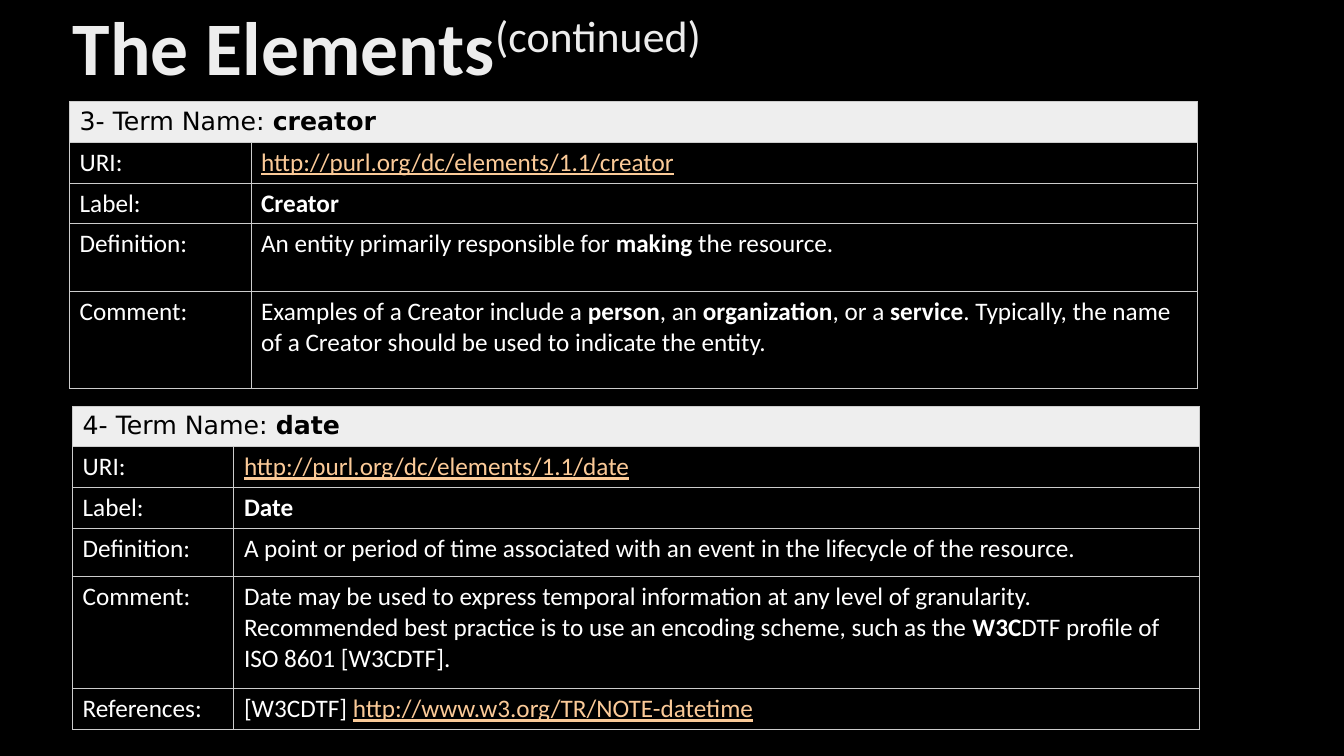
"""Build the slide describing the creator and date metadata elements."""
import dataclasses

import lxml.etree
import pptx
import pptx.dml.color
import pptx.enum.text
import pptx.oxml.ns
import pptx.util

Inches = pptx.util.Inches
Pt = pptx.util.Pt


@dataclasses.dataclass(frozen=True)
class Theme:
    background: str = "000000"
    title: str = "EDEDED"
    text: str = "FFFFFF"
    link: str = "FBCA98"
    header_fill: str = "EEEEEE"
    header_text: str = "000000"
    border: str = "CCCCCC"
    body_font: str = "Calibri"
    header_font: str = "DejaVu Sans"
    title_size: int = 54
    table_size: int = 18
    border_width: float = 0.75


class ElementSlide:
    def __init__(self, presentation, theme):
        self.theme = theme
        self.slide = presentation.slides.add_slide(presentation.slide_layouts[5])
        background = self.slide.background.fill
        background.solid()
        background.fore_color.rgb = self.rgb(theme.background)

    def rgb(self, color):
        return pptx.dml.color.RGBColor.from_string(color)

    def style(self, paragraph, font_name, size, color):
        paragraph.font.name = font_name
        paragraph.font.size = Pt(size)
        paragraph.font.color.rgb = self.rgb(color)

    def title(self, heading, suffix):
        title = self.slide.shapes.title
        title.left, title.top = Inches(0.62), Inches(0)
        title.width, title.height = Inches(11.5), Inches(1.01)
        frame = title.text_frame
        frame.auto_size = pptx.enum.text.MSO_AUTO_SIZE.NONE
        frame.vertical_anchor = pptx.enum.text.MSO_ANCHOR.MIDDLE
        paragraph = frame.paragraphs[0]
        paragraph.alignment = pptx.enum.text.PP_ALIGN.LEFT
        paragraph.line_spacing = 0.9
        self.style(paragraph, self.theme.body_font, self.theme.title_size, self.theme.title)
        for text, bold in ((heading, True), (suffix, False)):
            run = paragraph.add_run()
            run.text = text
            run.font.bold = bold
        run.font._element.set("baseline", "30000")

    def rich_text(self, paragraph, text):
        """Write text in which * encloses bold words and | encloses links."""
        for link_index, section in enumerate(text.split("|")):
            for bold_index, words in enumerate(section.split("*")):
                if not words:
                    continue
                run = paragraph.add_run()
                run.text = words
                run.font.bold = bold_index % 2 == 1
                if link_index % 2 == 1:
                    run.font.underline = True
                    run.font.color.rgb = self.rgb(self.theme.link)

    def borders(self, cell):
        properties = cell._tc.get_or_add_tcPr()
        qn = pptx.oxml.ns.qn
        for index, side in enumerate("LRTB"):
            line = lxml.etree.Element(qn(f"a:ln{side}"), w=str(Pt(self.theme.border_width)))
            fill = lxml.etree.SubElement(line, qn("a:solidFill"))
            lxml.etree.SubElement(fill, qn("a:srgbClr"), val=self.theme.border)
            properties.insert(index, line)

    def cell(self, cell, text, is_header):
        theme = self.theme
        if is_header:
            cell.fill.solid()
            cell.fill.fore_color.rgb = self.rgb(theme.header_fill)
        else:
            cell.fill.background()
        self.borders(cell)
        paragraph = cell.text_frame.paragraphs[0]
        font_name = theme.header_font if is_header else theme.body_font
        color = theme.header_text if is_header else theme.text
        self.style(paragraph, font_name, theme.table_size, color)
        self.rich_text(paragraph, text)

    def term_table(self, left, top, column_widths, row_heights, header, entries):
        table = self.slide.shapes.add_table(
            len(row_heights), len(column_widths), Inches(left), Inches(top),
            Inches(sum(column_widths)), Inches(sum(row_heights))).table
        table.first_row = table.horz_banding = False
        for column, width in zip(table.columns, column_widths):
            column.width = Inches(width)
        for row, height in zip(table.rows, row_heights):
            row.height = Inches(height)
        table.cell(0, 0).merge(table.cell(0, 1))
        for row_index, texts in enumerate([(header, ""), *entries]):
            for column_index, text in enumerate(texts):
                self.cell(table.cell(row_index, column_index), text, row_index == 0)


def main():
    presentation = pptx.Presentation()
    presentation.slide_width, presentation.slide_height = Inches(13.33), Inches(7.5)
    elements = ElementSlide(presentation, Theme())
    elements.title("The Elements", "(continued)")
    elements.term_table(
        0.69, 1.01, (1.8, 9.39), (0.4, 0.4, 0.4, 0.67, 0.96),
        "3- Term Name: *creator*",
        [("URI:", "|http://purl.org/dc/elements/1.1/creator|"),
         ("Label:", "*Creator*"),
         ("Definition:", "An entity primarily responsible for *making* the resource."),
         ("Comment:", "Examples of a Creator include a *person*, an *organization*, "
                      "or a *service*. Typically, the name of a Creator should be used "
                      "to indicate the entity.")])
    elements.term_table(
        0.72, 4.03, (1.6, 9.58), (0.4, 0.4, 0.4, 0.48, 1.11, 0.4),
        "4- Term Name: *date*",
        [("URI:", "|http://purl.org/dc/elements/1.1/date|"),
         ("Label:", "*Date*"),
         ("Definition:", "A point or period of time associated with an event in the "
                         "lifecycle of the resource."),
         ("Comment:", "Date may be used to express temporal information at any level of "
                      "granularity. Recommended best practice is to use an encoding "
                      "scheme, such as the *W3C*DTF profile of ISO 8601 [W3CDTF]."),
         ("References:", "[W3CDTF] |http://www.w3.org/TR/NOTE-datetime|")])
    presentation.save("out.pptx")


if __name__ == "__main__":
    main()
